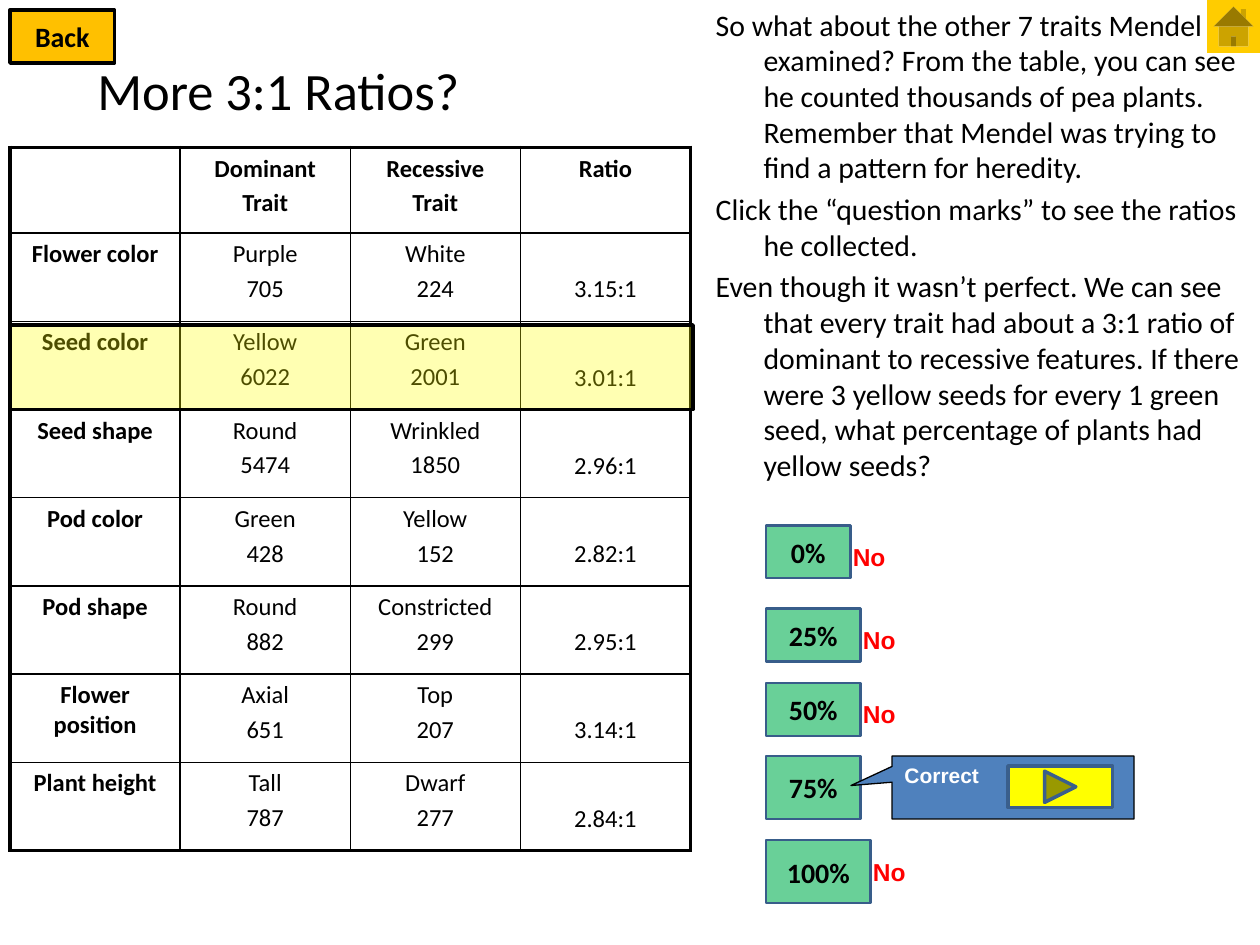
"""Builds the slide on Mendel's 3:1 ratios with its table and answer buttons."""
import dataclasses

import pptx
import pptx.dml.color
import pptx.enum.shapes
import pptx.enum.text
import pptx.oxml
import pptx.oxml.ns
import pptx.util

Inches = pptx.util.Inches
Pt = pptx.util.Pt
SHAPES = pptx.enum.shapes.MSO_SHAPE
ALIGN = pptx.enum.text.PP_ALIGN
ANCHOR = pptx.enum.text.MSO_ANCHOR
FIT = pptx.enum.text.MSO_AUTO_SIZE


@dataclasses.dataclass(frozen=True)
class Theme:
    black: str = "000000"
    white: str = "FFFFFF"
    answer: str = "00B050"
    answer_line: str = "385D8A"
    wrong: str = "FF0000"
    callout: str = "4F81BD"
    yellow: str = "FFFF00"
    next_line: str = "3A5F8C"
    home: str = "FFCC00"
    back: str = "FFC000"
    title_size: float = 30
    body_size: float = 17
    button_size: float = 16
    cell_size: float = 14
    note_size: float = 14
    callout_size: float = 12
    outer_border: float = 2.25
    inner_border: float = 1


THEME = Theme()

BODY = [
    "So what about the other 7 traits Mendel examined? From the table, you can see he counted "
    "thousands of pea plants. Remember that Mendel was trying to find a pattern for heredity.",
    "Click the “question marks” to see the ratios he collected.",
    "Even though it wasn’t perfect. We can see that every trait had about a 3:1 ratio of dominant "
    "to recessive features. If there were 3 yellow seeds for every 1 green seed, what percentage "
    "of plants had yellow seeds?",
]

TRAITS = [
    ("", "Dominant\nTrait", "Recessive\nTrait", "Ratio"),
    ("Flower color", "Purple\n705", "White\n224", "3.15:1"),
    ("Seed color", "Yellow\n6022", "Green\n2001", "3.01:1"),
    ("Seed shape", "Round\n5474", "Wrinkled\n1850", "2.96:1"),
    ("Pod color", "Green\n428", "Yellow\n152", "2.82:1"),
    ("Pod shape", "Round\n882", "Constricted\n299", "2.95:1"),
    ("Flower position", "Axial\n651", "Top\n207", "3.14:1"),
    ("Plant height", "Tall\n787", "Dwarf\n277", "2.84:1"),
]

ANSWERS = [
    ("0%", 4.17, 0.67, 0.42),
    ("25%", 4.83, 0.75, 0.42),
    ("50%", 5.42, 0.75, 0.42),
    ("75%", 6, 0.75, 0.5),
    ("100%", 6.67, 0.83, 0.5),
]
ANSWER_LEFT = 6.08
CORRECT = "75%"


def rgb(color):
    """Return a colour object for a hex string."""
    return pptx.dml.color.RGBColor.from_string(color)


def assign(target, values):
    """Set each named value on the target."""
    for name, value in values.items():
        setattr(target, name, value)


def write(frame, text, size, color, font="Calibri", bold=False, **layout):
    """Write one paragraph per line of text with a shared format."""
    frame.text = text
    for paragraph in frame.paragraphs:
        assign(paragraph, layout)
        assign(paragraph.font, {"name": font, "size": Pt(size), "bold": bold})
        paragraph.font.color.rgb = rgb(color)


def place(item, left, top, width, height):
    """Move and size an item in inches."""
    assign(item, {"left": Inches(left), "top": Inches(top),
                  "width": Inches(width), "height": Inches(height)})


def add_box(slide, preset, box, fill, line=None, line_width=1, opacity=100):
    """Add a flat preset shape with an optional outline and opacity."""
    shape = slide.shapes.add_shape(preset, *map(Inches, box))
    shape.shadow.inherit = False
    shape.fill.solid()
    shape.fill.fore_color.rgb = rgb(fill)
    if opacity < 100:
        color = shape.fill._xPr.find(".//" + pptx.oxml.ns.qn("a:srgbClr"))
        color.append(pptx.oxml.parse_xml(
            f'<a:alpha {pptx.oxml.ns.nsdecls("a")} val="{opacity * 1000}"/>'))
    if line:
        shape.line.color.rgb = rgb(line)
        shape.line.width = Pt(line_width)
    else:
        shape.line.fill.background()
    return shape


def add_label_button(slide, preset, box, label, fill, line, line_width, opacity=100):
    """Add a button with a centred bold label."""
    button = add_box(slide, preset, box, fill, line, line_width, opacity)
    button.text_frame.vertical_anchor = ANCHOR.MIDDLE
    write(button.text_frame, label, THEME.button_size, THEME.black, bold=True,
          alignment=ALIGN.CENTER)


def add_wrong_note(slide, left, top):
    """Add the red note beside a wrong answer."""
    frame = slide.shapes.add_textbox(*map(Inches, (left, top, 0.67, 0.33))).text_frame
    assign(frame, {"word_wrap": True, "auto_size": FIT.SHAPE_TO_FIT_TEXT})
    write(frame, "No", THEME.note_size, THEME.wrong, font="Arial", bold=True)


def fill_placeholders(slide):
    """Place and fill the title and the hanging body paragraphs."""
    title, body = slide.shapes.title, slide.placeholders[1]
    place(title, 0, 0.25, 4.42, 0.92)
    assign(title.text_frame, {"vertical_anchor": ANCHOR.MIDDLE, "auto_size": FIT.NONE})
    write(title.text_frame, "More 3:1 Ratios?", THEME.title_size, THEME.black,
          alignment=ALIGN.CENTER)
    place(body, 5.58, 0, 4.42, 4.08)
    body.text_frame.auto_size = FIT.NONE
    write(body.text_frame, "\n".join(BODY), THEME.body_size, THEME.black,
          space_before=Pt(THEME.body_size * 0.2))
    for paragraph in body.text_frame.paragraphs:
        properties = paragraph._p.get_or_add_pPr()
        properties.set("marL", str(Inches(0.38)))
        properties.set("indent", str(Inches(-0.38)))
        properties.insert_element_before(
            pptx.oxml.parse_xml(f'<a:buNone {pptx.oxml.ns.nsdecls("a")}/>'),
            "a:tabLst", "a:defRPr", "a:extLst")


def set_borders(cell, outer_sides):
    """Draw cell borders, heavier on the outer sides of the table."""
    properties = cell._tc.get_or_add_tcPr()
    for index, side in enumerate("LRTB"):
        width = THEME.outer_border if side in outer_sides else THEME.inner_border
        properties.insert(index, pptx.oxml.parse_xml(
            f'<a:ln{side} {pptx.oxml.ns.nsdecls("a")} w="{Pt(width)}"><a:solidFill>'
            f'<a:srgbClr val="{THEME.black}"/></a:solidFill></a:ln{side}>'))


def add_trait_table(slide):
    """Add the table of traits, counts and ratios."""
    last_row, last_column = len(TRAITS) - 1, len(TRAITS[0]) - 1
    table = slide.shapes.add_table(last_row + 1, last_column + 1,
                                   *map(Inches, (0.08, 1.17, 5.42, 5.58))).table
    assign(table, {"first_row": False, "horz_banding": False})
    for column in table.columns:
        column.width = Inches(1.35)
    for r, traits in enumerate(TRAITS):
        table.rows[r].height = Inches(0.7 if r else 0.68)
        for c, text in enumerate(traits):
            cell = table.cell(r, c)
            cell.fill.background()
            write(cell.text_frame, text, THEME.cell_size, THEME.black, bold=r == 0 or c == 0,
                  alignment=ALIGN.CENTER, space_before=Pt(THEME.cell_size * 0.2))
            if r and c == last_column:
                cell.margin_top = Inches(0.33)
            edges = {"L": c == 0, "R": c == last_column, "T": r == 0, "B": r == last_row}
            set_borders(cell, [side for side, outer in edges.items() if outer])


def main():
    """Build and save the slide."""
    deck = pptx.Presentation()
    assign(deck, {"slide_width": Inches(10), "slide_height": Inches(7.5)})
    slide = deck.slides.add_slide(deck.slide_layouts[1])
    fill_placeholders(slide)
    for label, top, width, height in ANSWERS:
        add_label_button(slide, SHAPES.ACTION_BUTTON_CUSTOM, (ANSWER_LEFT, top, width, height),
                         label, THEME.answer, THEME.answer_line, 1.25, opacity=59)
    add_trait_table(slide)
    add_box(slide, SHAPES.ACTION_BUTTON_HOME, (9.58, 0, 0.42, 0.42), THEME.home)
    callout = add_box(slide, SHAPES.RECTANGULAR_CALLOUT, (7.08, 6, 1.92, 0.5),
                      THEME.callout, THEME.black, 0.75)
    callout.adjustments[0], callout.adjustments[1] = -0.67, -0.03
    callout.text_frame.vertical_anchor = ANCHOR.TOP
    write(callout.text_frame, "Correct", THEME.callout_size, THEME.white, font="Arial",
          bold=True, alignment=ALIGN.LEFT)
    add_box(slide, SHAPES.ACTION_BUTTON_FORWARD_OR_NEXT, (8, 6.08, 0.83, 0.33),
            THEME.yellow, THEME.next_line, 2)
    add_box(slide, SHAPES.RECTANGLE, (0.08, 2.58, 5.42, 0.67), THEME.yellow, THEME.black, 2,
            opacity=30)
    for label, top, width, _ in ANSWERS:
        if label != CORRECT:
            add_wrong_note(slide, ANSWER_LEFT + width - 0.08, top + 0.08)
    add_label_button(slide, SHAPES.RECTANGLE, (0.08, 0.08, 0.83, 0.42), "Back",
                     THEME.back, THEME.black, 2)
    deck.save("out.pptx")


if __name__ == "__main__":
    main()
